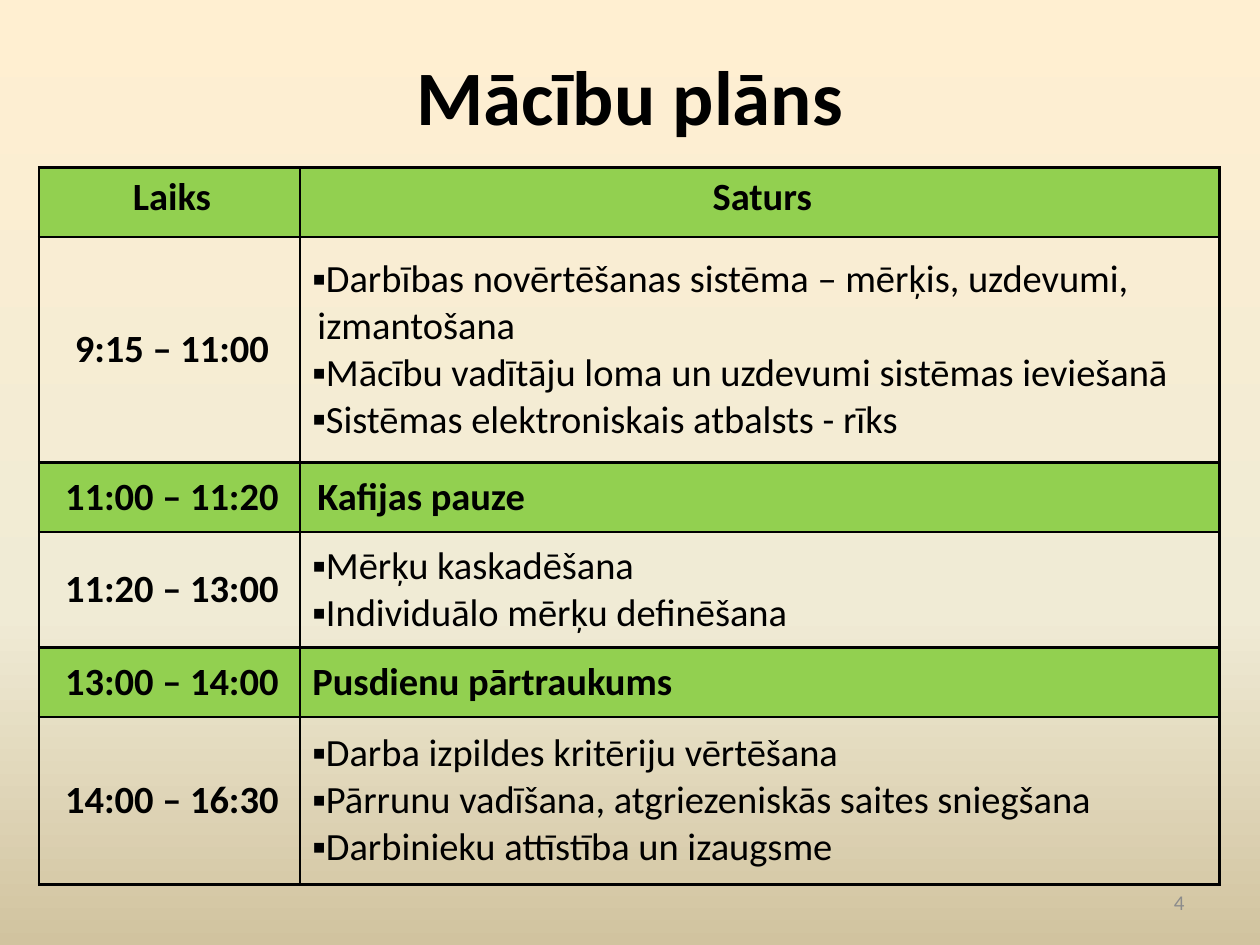
from dataclasses import dataclass

from lxml import etree
from pptx import Presentation
from pptx.dml.color import RGBColor
from pptx.enum.text import MSO_ANCHOR, PP_ALIGN
from pptx.oxml.ns import qn
from pptx.util import Inches, Pt

LEFT, CENTER, RIGHT = PP_ALIGN.LEFT, PP_ALIGN.CENTER, PP_ALIGN.RIGHT
TOP, MIDDLE = MSO_ANCHOR.TOP, MSO_ANCHOR.MIDDLE

SLIDE_W, SLIDE_H = Inches(10), Inches(7.5)
FONT = "Calibri"
BLACK, GRAY, GREEN = "000000", "8C8C8C", "92D050"
BACKGROUND_STOPS = [(0, "FFEFD1"), (65, "F0EBD5"), (100, "D1C39F")]
BORDER_WIDTH = Pt(1.5)
COLUMN_WIDTHS = [2.07, 7.3]
MARGIN = 0.04
BULLET_INDENT = -0.38


@dataclass
class Session:
    time: str
    topics: list[str]
    height: float
    highlighted: bool = False
    bulleted: bool = False
    indent: float = 0
    align: PP_ALIGN = LEFT
    anchor: MSO_ANCHOR = MIDDLE


SESSIONS = [
    Session("Laiks", ["Saturs"], 0.55, highlighted=True, align=CENTER, anchor=TOP),
    Session("9:15 – 11:00", [
        "Darbības novērtēšanas sistēma – mērķis, uzdevumi, izmantošana",
        "Mācību vadītāju loma un uzdevumi sistēmas ieviešanā",
        "Sistēmas elektroniskais atbalsts - rīks",
    ], 1.79, bulleted=True, indent=BULLET_INDENT),
    Session("11:00 – 11:20", ["Kafijas pauze"], 0.55, highlighted=True),
    Session("11:20 – 13:00", [
        "Mērķu kaskadēšana",
        "Individuālo mērķu definēšana",
    ], 0.92, bulleted=True, indent=BULLET_INDENT),
    Session("13:00 – 14:00", ["Pusdienu pārtraukums"], 0.55,
            highlighted=True, indent=-0.25),
    Session("14:00 – 16:30", [
        "Darba izpildes kritēriju vērtēšana",
        "Pārrunu vadīšana, atgriezeniskās saites sniegšana",
        "Darbinieku attīstība un izaugsme",
    ], 1.33, bulleted=True, indent=BULLET_INDENT),
]


def rgb(color: str) -> RGBColor:
    return RGBColor.from_string(color)


def add_child(parent, tag: str, **attributes):
    return etree.SubElement(parent, qn(tag), attributes)


def style_paragraph(paragraph, size: float, color: str, bold: bool, align) -> None:
    paragraph.alignment = align
    font = paragraph.font
    font.name, font.size, font.bold = FONT, Pt(size), bold
    font.color.rgb = rgb(color)


def paint_background(slide) -> None:
    slide.background.fill.gradient()
    gradient = slide.element.find(".//" + qn("a:gradFill"))
    stops = gradient.find(qn("a:gsLst"))
    for stop in list(stops):
        stops.remove(stop)
    for position, color in BACKGROUND_STOPS:
        stop = add_child(stops, "a:gs", pos=str(position * 1000))
        add_child(stop, "a:srgbClr", val=color)
    direction = gradient.find(qn("a:lin"))
    direction.set("ang", str(90 * 60000))
    direction.set("scaled", "0")


def add_label(slide, text: str, x: float, y: float, w: float, h: float,
              size: float, color: str, bold: bool, align) -> None:
    """Add a text box placed by shares of the slide's size."""
    box = slide.shapes.add_textbox(int(x * SLIDE_W), int(y * SLIDE_H),
                                   int(w * SLIDE_W), int(h * SLIDE_H))
    frame = box.text_frame
    frame.word_wrap = True
    frame.vertical_anchor = MIDDLE
    frame.text = text
    style_paragraph(frame.paragraphs[0], size, color, bold, align)


def draw_borders(cell) -> None:
    properties = cell._tc.get_or_add_tcPr()
    for side in ("a:lnL", "a:lnR", "a:lnT", "a:lnB"):
        line = add_child(properties, side, w=str(BORDER_WIDTH))
        add_child(add_child(line, "a:solidFill"), "a:srgbClr", val=BLACK)


def fill_cell(cell, lines: list[str], session: Session, bold: bool, align,
              indent: float = 0, bulleted: bool = False) -> None:
    draw_borders(cell)
    if session.highlighted:
        cell.fill.solid()
        cell.fill.fore_color.rgb = rgb(GREEN)
    else:
        cell.fill.background()
    cell.vertical_anchor = session.anchor
    cell.text_frame.text = "\n".join(lines)
    for paragraph in cell.text_frame.paragraphs:
        properties = paragraph._p.get_or_add_pPr()
        properties.set("marL", str(Inches(MARGIN)))
        properties.set("indent", str(Inches(indent)))
        if bulleted:
            add_child(properties, "a:buFont", typeface=FONT)
            add_child(properties, "a:buChar", char="▪")
            tabs = add_child(properties, "a:tabLst")
            add_child(tabs, "a:tab", pos=str(Inches(0.5)), algn="l")
        style_paragraph(paragraph, 22, BLACK, bold, align)


def add_schedule(slide, sessions: list[Session]) -> None:
    table = slide.shapes.add_table(
        len(sessions), len(COLUMN_WIDTHS), Inches(0.31), Inches(1.33),
        Inches(sum(COLUMN_WIDTHS)), Inches(sum(s.height for s in sessions))).table
    table.first_row = table.horz_banding = False
    for column, width in zip(table.columns, COLUMN_WIDTHS):
        column.width = Inches(width)
    for row, session in zip(table.rows, sessions):
        row.height = Inches(session.height)
        time_cell, topics_cell = row.cells
        fill_cell(time_cell, [session.time], session, True, CENTER)
        fill_cell(topics_cell, session.topics, session, not session.bulleted,
                  session.align, session.indent, session.bulleted)


def main() -> None:
    presentation = Presentation()
    presentation.slide_width, presentation.slide_height = SLIDE_W, SLIDE_H
    slide = presentation.slides.add_slide(presentation.slide_layouts[6])
    paint_background(slide)
    # Title and page number
    add_label(slide, "Mācību plāns", 0.05, 0.04, 0.9, 0.12, 44, BLACK, True, CENTER)
    add_label(slide, "4", 0.72, 0.93, 0.23, 0.05, 12, GRAY, False, RIGHT)
    # Training schedule
    add_schedule(slide, SESSIONS)
    presentation.save("out.pptx")


if __name__ == "__main__":
    main()
